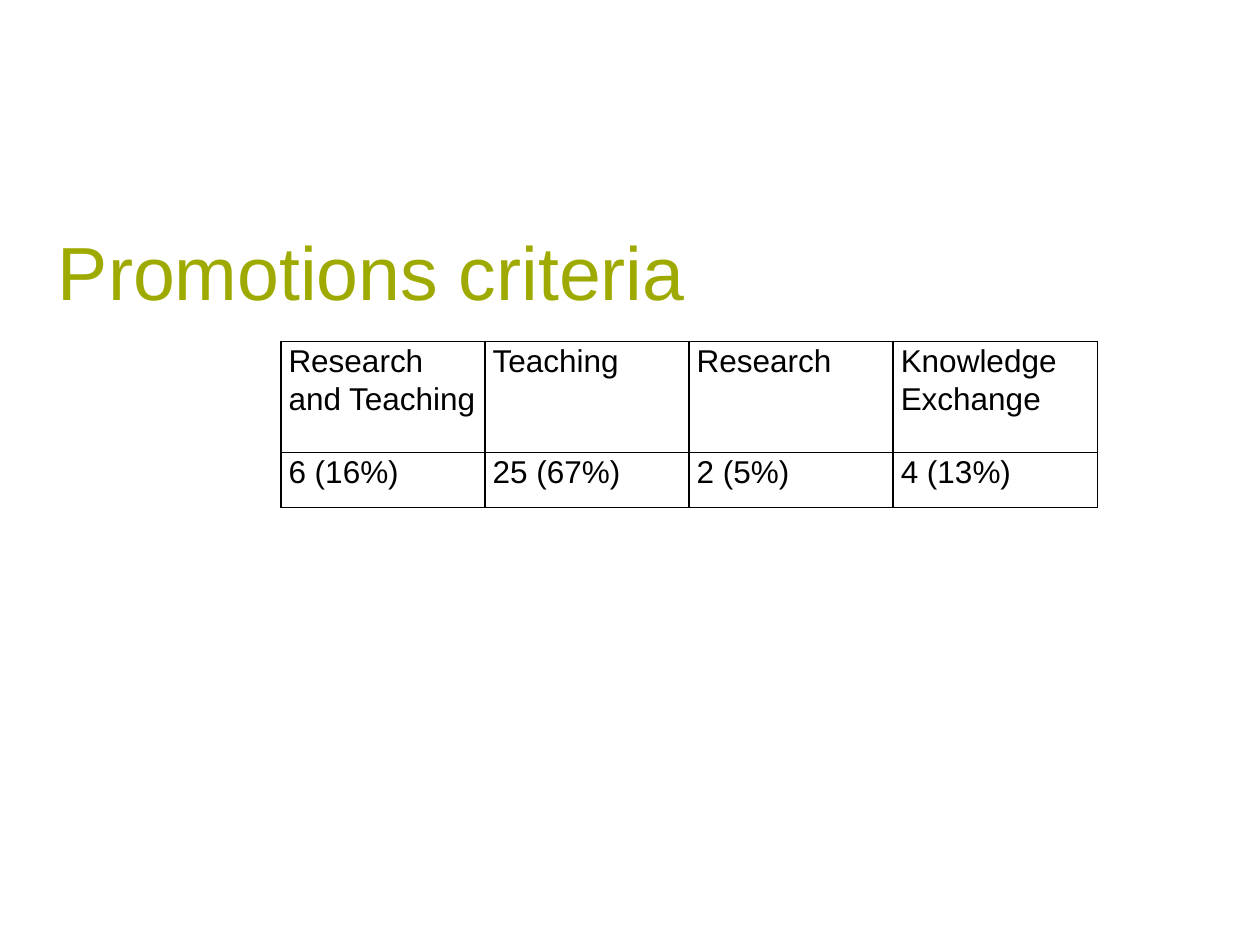
"""Build the promotions criteria slide: a title and a two-row table."""
from lxml.etree import SubElement
from pptx import Presentation
from pptx.dml.color import RGBColor
from pptx.enum.text import MSO_ANCHOR as Anchor
from pptx.oxml.ns import qn
from pptx.util import Inches, Pt

OLIVE = RGBColor(0x9F, 0xAA, 0x00)
BLACK = RGBColor(0x00, 0x00, 0x00)
FONT = "Arial"
COLUMN_WIDTH = Inches(1.62)
ROW_HEIGHTS = (Inches(0.88), Inches(0.44))
CRITERIA = (
    ("Research and Teaching", "Teaching", "Research", "Knowledge Exchange"),
    ("6 (16%)", "25 (67%)", "2 (5%)", "4 (13%)"),
)


def style(paragraph, size, color):
    paragraph.font.name = FONT
    paragraph.font.size = Pt(size)
    paragraph.font.color.rgb = color


def add_title(slide, text):
    title = slide.shapes.add_textbox(Inches(0.38), Inches(1.75), Inches(9), Inches(0.8))
    frame = title.text_frame
    frame.word_wrap = True
    frame.vertical_anchor = Anchor.MIDDLE
    frame.margin_left = frame.margin_right = Inches(0.08)
    frame.margin_top = frame.margin_bottom = Inches(0.04)
    frame.text = text
    style(frame.paragraphs[0], 43, OLIVE)


def add_borders(cell):
    properties = cell._tc.get_or_add_tcPr()
    for side in ("a:lnL", "a:lnR", "a:lnT", "a:lnB"):
        line = SubElement(properties, qn(side), w=str(Pt(1)))
        fill = SubElement(line, qn("a:solidFill"))
        SubElement(fill, qn("a:srgbClr"), val=str(BLACK))


def fill_cell(cell, text):
    cell.margin_left = cell.margin_right = Inches(0.06)
    cell.margin_top = cell.margin_bottom = 0
    add_borders(cell)
    cell.fill.background()
    cell.text = text
    paragraph = cell.text_frame.paragraphs[0]
    paragraph.line_spacing = 1.07
    style(paragraph, 18, BLACK)


def add_criteria_table(slide, rows):
    columns = len(rows[0])
    table = slide.shapes.add_table(
        len(rows), columns, Inches(2.23), Inches(2.71),
        COLUMN_WIDTH * columns, sum(ROW_HEIGHTS)).table
    table.first_row = table.horz_banding = False
    for column in table.columns:
        column.width = COLUMN_WIDTH
    for r, (texts, height) in enumerate(zip(rows, ROW_HEIGHTS)):
        table.rows[r].height = height
        for c, text in enumerate(texts):
            fill_cell(table.cell(r, c), text)


def main():
    deck = Presentation()
    deck.slide_width, deck.slide_height = Inches(10), Inches(7.5)
    slide = deck.slides.add_slide(deck.slide_layouts[6])
    add_title(slide, "Promotions criteria")
    add_criteria_table(slide, CRITERIA)
    deck.save("out.pptx")


if __name__ == "__main__":
    main()
